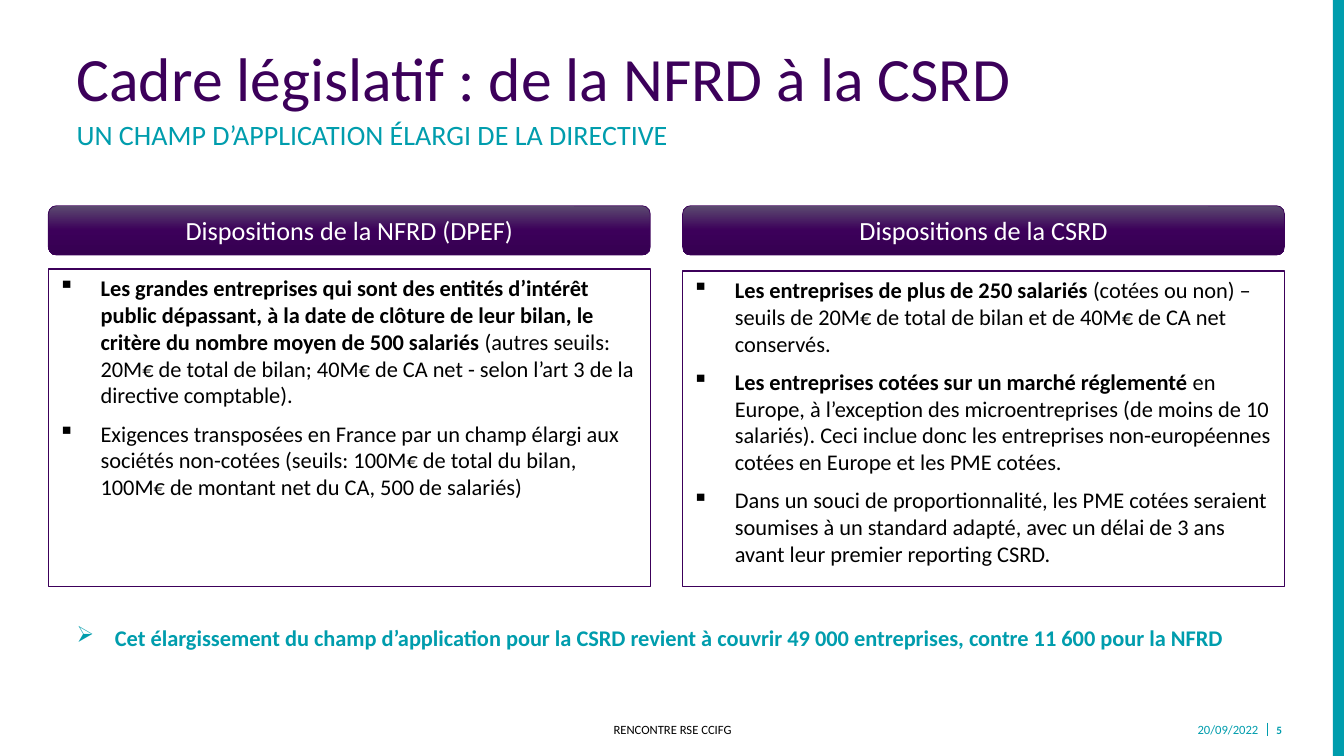
"""Builds the slide on the move from the NFRD to the CSRD."""
from dataclasses import dataclass

import lxml.etree
import pptx
import pptx.dml.color
import pptx.enum.shapes
import pptx.enum.text
import pptx.oxml.ns
import pptx.util

Rgb = pptx.dml.color.RGBColor
Align = pptx.enum.text.PP_ALIGN
Anchor = pptx.enum.text.MSO_ANCHOR
Kind = pptx.enum.shapes.MSO_SHAPE
qn = pptx.oxml.ns.qn


@dataclass(frozen=True)
class Theme:
    """Colours, font and type sizes of the slide."""
    plum: Rgb = Rgb.from_string("3C005A")
    teal: Rgb = Rgb.from_string("009DAD")
    white: Rgb = Rgb.from_string("FFFFFF")
    black: Rgb = Rgb.from_string("000000")
    light: Rgb = Rgb.from_string("5C4B70")
    dark: Rgb = Rgb.from_string("350050")
    face: str = "Calibri"
    title: float = 44
    sub: float = 20
    head: float = 18.7
    body: float = 16
    foot: float = 9
    page: float = 8


@dataclass(frozen=True)
class Box:
    """A place on the slide, in px."""
    left: int
    top: int
    width: int
    height: int


@dataclass(frozen=True)
class Label:
    """A line of text with its place and style."""
    box: Box
    text: str
    size: float
    color: Rgb
    align: Align = Align.LEFT
    anchor: Anchor = Anchor.TOP
    bold: bool = False
    lead: float = 1.0
    mark: str = ""


@dataclass(frozen=True)
class Item:
    """A bullet with a bold start and a plain end."""
    strong: str
    plain: str


@dataclass(frozen=True)
class Panel:
    """A column with a header and a list."""
    left: int
    top: int
    head: str
    items: tuple[Item, ...]


THEME = Theme()
SCALE = 9144
WIDTH, HEIGHT = 1333, 750
SPAN, BASE = 597, 582

LABELS = (
    Label(Box(76, 48, 1181, 71), "Cadre législatif : de la NFRD à la CSRD",
          THEME.title, THEME.plum, lead=0.9),
    Label(Box(76, 120, 1181, 39), "UN CHAMP D’APPLICATION ÉLARGI DE LA DIRECTIVE",
          THEME.sub, THEME.teal, lead=0.9),
    Label(Box(76, 619, 1181, 59),
          "Cet élargissement du champ d’application pour la CSRD revient à couvrir "
          "49 000 entreprises, contre 11 600 pour la NFRD",
          THEME.body, THEME.teal, bold=True, mark="➢"),
    Label(Box(234, 714, 866, 20), "RENCONTRE RSE CCIFG", THEME.foot, THEME.black,
          Align.CENTER, Anchor.MIDDLE),
    Label(Box(1169, 714, 79, 20), "20/09/2022", THEME.foot, THEME.teal,
          Align.RIGHT, Anchor.MIDDLE),
    Label(Box(1266, 714, 25, 20), "5", THEME.page, THEME.teal,
          anchor=Anchor.MIDDLE, bold=True),
)

PANELS = (
    Panel(48, 267, "Dispositions de la NFRD (DPEF)", (
        Item("Les grandes entreprises qui sont des entités d’intérêt public dépassant, "
             "à la date de clôture de leur bilan, le critère du nombre moyen de "
             "500 salariés ",
             "(autres seuils: 20M€ de total de bilan; 40M€ de CA net - selon l’art 3 "
             "de la directive comptable)."),
        Item("", "Exigences transposées en France par un champ élargi aux sociétés "
             "non-cotées (seuils: 100M€ de total du bilan, 100M€ de montant net du CA, "
             "500 de salariés)"),
    )),
    Panel(677, 269, "Dispositions de la CSRD", (
        Item("Les entreprises de plus de 250 salariés ",
             "(cotées ou non) – seuils de 20M€ de total de bilan et de 40M€ de CA net "
             "conservés."),
        Item("Les entreprises cotées sur un marché réglementé ",
             "en Europe, à l’exception des microentreprises (de moins de 10 salariés). "
             "Ceci inclue donc les entreprises non-européennes cotées en Europe et "
             "les PME cotées."),
        Item("", "Dans un souci de proportionnalité, les PME cotées seraient soumises "
             "à un standard adapté, avec un délai de 3 ans avant leur premier "
             "reporting CSRD."),
    )),
)


def place(box: Box) -> tuple[int, int, int, int]:
    """Turn a px box into EMU."""
    return (box.left * SCALE, box.top * SCALE, box.width * SCALE, box.height * SCALE)


def style(para, size: float, color: Rgb, bold: bool | None = None) -> None:
    """Set the font of a paragraph."""
    font = para.font
    font.name, font.size, font.bold = THEME.face, pptx.util.Pt(size), bold
    font.color.rgb = color


def bullet(para, mark: str, indent: int) -> None:
    """Give a paragraph a bullet and a hanging indent."""
    props = para._p.get_or_add_pPr()
    props.set("marL", str(indent * SCALE))
    props.set("indent", str(-indent * SCALE))
    lxml.etree.SubElement(props, qn("a:buChar")).set("char", mark)


def block(slide, kind: Kind, box: Box, fill: Rgb, line: float = 0):
    """Draw a filled shape, outlined in plum if a line width is given."""
    shape = slide.shapes.add_shape(kind, *place(box))
    shape.shadow.inherit = False
    shape.fill.solid()
    shape.fill.fore_color.rgb = fill
    if line:
        shape.line.color.rgb = THEME.plum
        shape.line.width = pptx.util.Pt(line)
    else:
        shape.line.fill.background()
    return shape


def shade(shape) -> None:
    """Fill a shape with the plum gradient, top to bottom."""
    shape.fill.gradient()
    shape.fill.gradient_angle = 270
    stops = shape._element.spPr.find(qn("a:gradFill")).find(qn("a:gsLst"))
    for old in list(stops):
        stops.remove(old)
    for pos, color in ((0, THEME.light), (50, THEME.plum), (100, THEME.dark)):
        stop = lxml.etree.SubElement(stops, qn("a:gs"), pos=str(pos * 1000))
        lxml.etree.SubElement(stop, qn("a:srgbClr"), val=str(color))


def write(slide, label: Label) -> None:
    """Draw a label as a text box."""
    frame = slide.shapes.add_textbox(*place(label.box)).text_frame
    frame.word_wrap = True
    frame.vertical_anchor = label.anchor
    frame.margin_left = frame.margin_right = frame.margin_top = frame.margin_bottom = 0
    para = frame.paragraphs[0]
    para.text = label.text
    if label.mark:
        bullet(para, label.mark, 38)
    para.alignment, para.line_spacing = label.align, label.lead
    style(para, label.size, label.color, label.bold)


def column(slide, panel: Panel) -> None:
    """Draw a panel: header bar, then framed list."""
    head = block(slide, Kind.ROUNDED_RECTANGLE, Box(panel.left, 204, SPAN, 49),
                 THEME.plum, 0.5)
    shade(head)
    head.text_frame.vertical_anchor = Anchor.MIDDLE
    title = head.text_frame.paragraphs[0]
    title.text, title.alignment = panel.head, Align.CENTER
    style(title, THEME.head, THEME.white)

    area = Box(panel.left, panel.top, SPAN, BASE - panel.top)
    frame = block(slide, Kind.RECTANGLE, area, THEME.white, 1).text_frame
    frame.vertical_anchor = Anchor.TOP
    for i, item in enumerate(panel.items):
        para = frame.add_paragraph() if i else frame.paragraphs[0]
        bullet(para, "▪", 42)
        para.alignment, para.space_after = Align.LEFT, pptx.util.Pt(8)
        style(para, THEME.body, THEME.black)
        for text, bold in ((item.strong, True), (item.plain, False)):
            if text:
                run = para.add_run()
                run.text, run.font.bold = text, bold


def main() -> None:
    """Build and save the slide."""
    deck = pptx.Presentation()
    deck.slide_width, deck.slide_height = WIDTH * SCALE, HEIGHT * SCALE
    slide = deck.slides.add_slide(deck.slide_layouts[6])
    block(slide, Kind.RECTANGLE, Box(1322, 0, WIDTH - 1322, HEIGHT), THEME.teal)
    rule = slide.shapes.add_connector(pptx.enum.shapes.MSO_CONNECTOR.STRAIGHT,
                                      1257 * SCALE, 717 * SCALE, 1257 * SCALE, 730 * SCALE)
    rule.line.color.rgb, rule.line.width = THEME.teal, pptx.util.Pt(1)
    lxml.etree.SubElement(rule._element.spPr, qn("a:effectLst"))
    for label in LABELS:
        write(slide, label)
    for panel in PANELS:
        column(slide, panel)
    deck.save("out.pptx")


if __name__ == "__main__":
    main()
